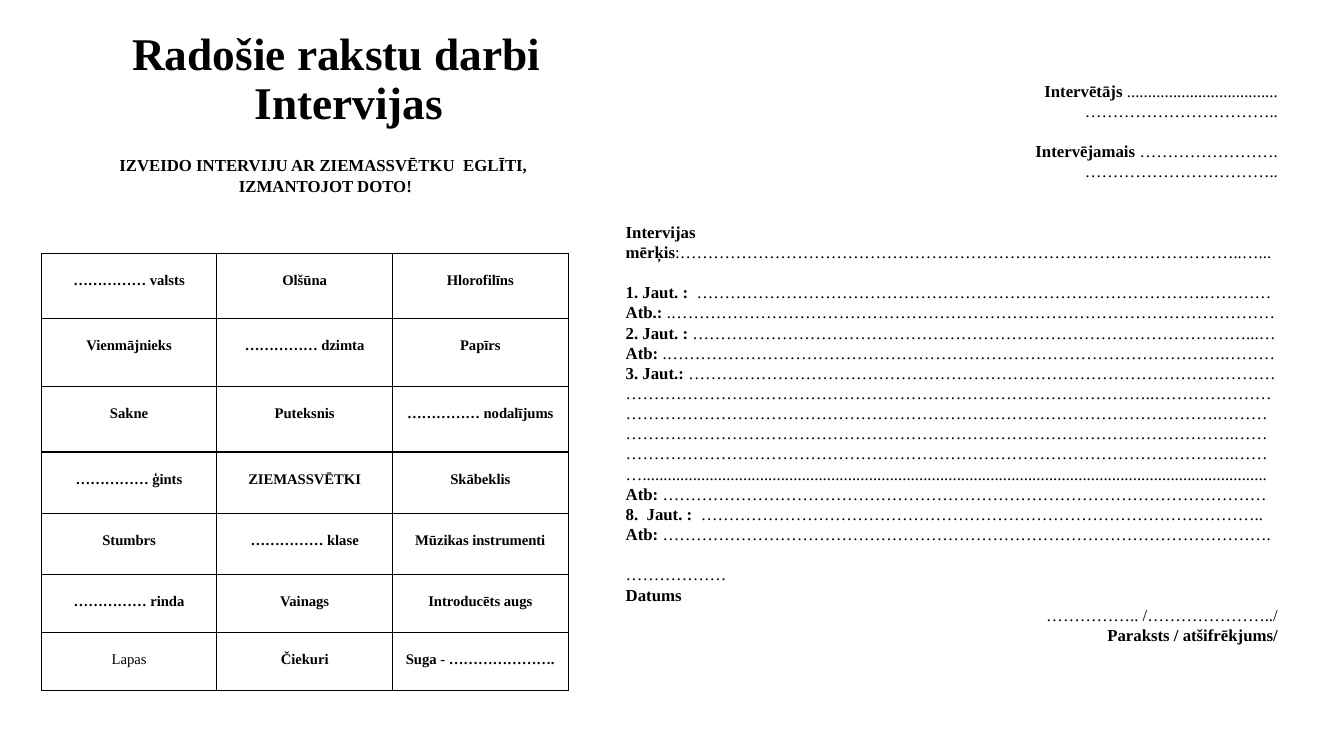
"""Build a Latvian worksheet slide with a word table and an interview form."""
import dataclasses
import typing

import lxml.etree
import pptx
import pptx.dml.color
import pptx.enum.text
import pptx.oxml.ns
import pptx.util

Cm = pptx.util.Cm
Pt = pptx.util.Pt
Align = pptx.enum.text.PP_ALIGN
Anchor = pptx.enum.text.MSO_ANCHOR


@dataclasses.dataclass(frozen=True)
class Theme:
    font: str = "Times New Roman"
    ink: str = "000000"
    title: float = 32.4
    body: float = 12
    cell: float = 10.5
    line: float = 14.4
    rule: float = 1


@dataclasses.dataclass(frozen=True)
class Line:
    bold: str = ""
    plain: str = ""
    align: typing.Any = Align.LEFT
    gap: int = 0


@dataclasses.dataclass(frozen=True)
class Box:
    left: float
    top: float
    width: float
    height: float
    wrap: bool = True
    anchor: typing.Any = Anchor.TOP


THEME = Theme()
TITLE = Box(2.34, 1.02, 12.27, 2.03, anchor=Anchor.MIDDLE)
TASK = Box(2.72, 3.73, 10.97, 1.32, wrap=False)
FORM = Box(15.52, 1.9, 16.94, 14.63)
GRID = Box(1.04, 6.38, 13.28, 11.01)
ROWS = (1.64, 1.71, 1.66, 1.54, 1.54, 1.46, 1.46)
WORDS = (
    ("…………… valsts", "Olšūna", "Hlorofilīns"),
    ("Vienmājnieks", "…………… dzimta", "Papīrs"),
    ("Sakne", "Puteksnis", "…………… nodalījums"),
    ("…………… ģints", "ZIEMASSVĒTKI", "Skābeklis"),
    ("Stumbrs", "…………… klase", "Mūzikas instrumenti"),
    ("…………… rinda", "Vainags", "Introducēts augs"),
    ("Lapas", "Čiekuri", "Suga - …………………."),
)
PLAIN = "Lapas"
LINES = (
    Line("Intervētājs ", "....................................", Align.RIGHT),
    Line("", "……………………………..", Align.RIGHT),
    Line("Intervējamais ", "…………………….", Align.RIGHT, 1),
    Line("", "……………………………..", Align.RIGHT),
    Line("Intervijas mērķis", ":………………………………………………………………………………………..…...", gap=2),
    Line("1. Jaut. :  ", "……………………………………………………………………………….…………", gap=1),
    Line("Atb.: ", ".………………………………………………………………………………………………"),
    Line("2. Jaut. : ", "………………………………………………………………………………………...…"),
    Line("Atb: ", ".……………………………………………………………………………………….………"),
    Line("3. Jaut.: ", "……………………………………………………………………………………………"),
    Line("", "…………………………………………………………………………………..…………………"),
    Line("", "…………………………………………………………………………………………….………"
             "……………………………………………………………………………………………….……"
             "……………………………………………………………………………………………….………"
             "....................................................................."
             "................................................................................"),
    Line("Atb: ", "………………………………………………………………………………………………"),
    Line("8.  Jaut. :  ", "……………………………………………………………………………………….."),
    Line("Atb: ", "……………………………………………………………………………………………….",),
    Line("", "………………", gap=1),
    Line("Datums"),
    Line("", "…………….. /…………………../", Align.RIGHT),
    Line("Paraksts / atšifrēkjums/", "", Align.RIGHT),
)


def style(run: typing.Any, size: float, bold: bool) -> None:
    """Set the font of a run."""
    run.font.name = THEME.font
    run.font.size = Pt(size)
    run.font.bold = bold
    run.font.color.rgb = pptx.dml.color.RGBColor.from_string(THEME.ink)


def place(slide: typing.Any, box: Box) -> typing.Any:
    """Add a text box and return its frame."""
    shape = slide.shapes.add_textbox(
        Cm(box.left), Cm(box.top), Cm(box.width), Cm(box.height))
    frame = shape.text_frame
    frame.word_wrap = box.wrap
    frame.vertical_anchor = box.anchor
    return frame


def center(frame: typing.Any, text: str, size: float, space: float,
           bold: bool = True) -> None:
    """Fill a frame with centred text."""
    frame.text = text
    for para in frame.paragraphs:
        para.alignment = Align.CENTER
        para.line_spacing = space
        for run in para.runs:
            style(run, size, bold)


def head(slide: typing.Any) -> None:
    """Draw the title and the task."""
    frame = place(slide, TITLE)
    center(frame, "Radošie rakstu darbi\vIntervijas", THEME.title, 0.9)
    para = frame.paragraphs[0]
    para.space_before = Pt(10)
    props = para._p.get_or_add_pPr()
    props.set("marL", str(Cm(0.64)))
    props.set("indent", str(-Cm(0.64)))
    center(place(slide, TASK),
           "IZVEIDO INTERVIJU AR ZIEMASSVĒTKU  EGLĪTI, \nIZMANTOJOT DOTO!",
           THEME.body, 1.07)


def frame_cell(cell: typing.Any) -> None:
    """Give a cell clear fill and thin borders."""
    props = cell._tc.get_or_add_tcPr()
    name = pptx.oxml.ns.qn
    for side in ("a:lnL", "a:lnR", "a:lnT", "a:lnB"):
        edge = lxml.etree.SubElement(props, name(side), w=str(Pt(THEME.rule)))
        fill = lxml.etree.SubElement(edge, name("a:solidFill"))
        lxml.etree.SubElement(fill, name("a:srgbClr"), val=THEME.ink)
    cell.fill.background()


def grid(slide: typing.Any) -> None:
    """Draw the table of words."""
    table = slide.shapes.add_table(
        len(WORDS), len(WORDS[0]), Cm(GRID.left), Cm(GRID.top),
        Cm(GRID.width), Cm(GRID.height)).table
    table.first_row = table.horz_banding = False
    for row, high, words in zip(table.rows, ROWS, WORDS):
        row.height = Cm(high)
        for cell, word in zip(row.cells, words):
            cell.margin_left = cell.margin_right = Cm(0.1)
            cell.margin_top, cell.margin_bottom = Cm(0.45), Cm(0)
            center(cell.text_frame, word, THEME.cell, 1.07, word != PLAIN)
            frame_cell(cell)


def form(slide: typing.Any) -> None:
    """Draw the interview form."""
    frame = place(slide, FORM)
    frame.text = "\n".join(line.bold for line in LINES)
    for para, line in zip(frame.paragraphs, LINES):
        para.alignment = line.align
        para.space_before = Pt(line.gap * THEME.line)
        for run in para.runs:
            style(run, THEME.body, True)
        if line.plain:
            run = para.add_run()
            run.text = line.plain
            style(run, THEME.body, False)


def main() -> None:
    """Build and save the slide."""
    deck = pptx.Presentation()
    deck.slide_width, deck.slide_height = Cm(33.87), Cm(19.05)
    slide = deck.slides.add_slide(deck.slide_layouts[6])
    head(slide)
    grid(slide)
    form(slide)
    deck.save("out.pptx")


if __name__ == "__main__":
    main()
